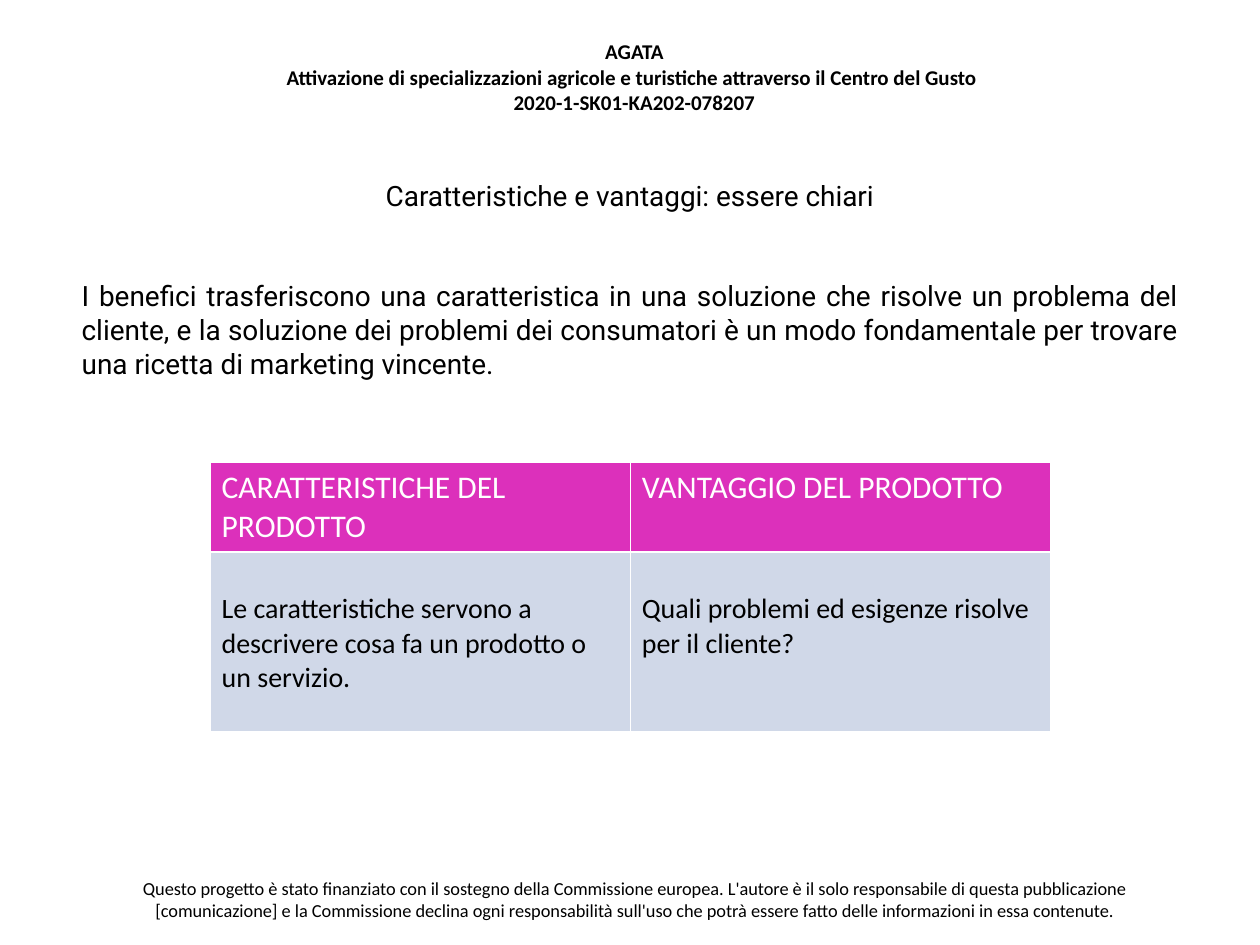
from lxml import etree
from pptx import Presentation
from pptx.dml.color import RGBColor
from pptx.enum.text import PP_ALIGN as Align
from pptx.oxml.ns import qn
from pptx.util import Inches, Pt

COLORS = {"text": "000000", "white": "FFFFFF", "header": "DC30BB", "body": "D0D8E8"}


def write(frame, lines, size, font="Calibri", color="text", bold=False, align=Align.LEFT):
    """Fill a text frame with one paragraph per line."""
    frame.word_wrap = True
    for index, line in enumerate(lines):
        para = frame.paragraphs[0] if index == 0 else frame.add_paragraph()
        para.alignment = align
        span = para.add_run()
        span.text = line
        span.font.size = Pt(size)
        span.font.name = font
        span.font.bold = bold
        span.font.color.rgb = RGBColor.from_string(COLORS[color])


def add_borders(cell, color, width):
    properties = cell._tc.get_or_add_tcPr()
    for index, side in enumerate(("lnL", "lnR", "lnT", "lnB")):
        line = etree.Element(qn(f"a:{side}"), w=str(Pt(width)))
        fill = etree.SubElement(line, qn("a:solidFill"))
        etree.SubElement(fill, qn("a:srgbClr"), val=COLORS[color])
        properties.insert(index, line)


deck = Presentation()
deck.slide_width, deck.slide_height = Inches(10), Inches(7.5)
page = deck.slides.add_slide(deck.slide_layouts[6])

# Project heading and funding notice
heading = page.shapes.add_textbox(Inches(2.08), Inches(0.26), Inches(5.91), Inches(0.71))
write(heading.text_frame, [
    "AGATA",
    "Attivazione di specializzazioni agricole e turistiche attraverso il Centro del Gusto ",
    "2020-1-SK01-KA202-078207",
], 12, bold=True, align=Align.CENTER)

notice = page.shapes.add_textbox(Inches(0.54), Inches(6.91), Inches(9), Inches(0.47))
write(notice.text_frame, [
    "Questo progetto è stato finanziato con il sostegno della Commissione europea. "
    "L'autore è il solo responsabile di questa pubblicazione [comunicazione] e la "
    "Commissione declina ogni responsabilità sull'uso che potrà essere fatto delle "
    "informazioni in essa contenute.",
], 10.5, align=Align.CENTER)

# Title and explanation
body = page.shapes.add_textbox(Inches(0.55), Inches(1.37), Inches(8.9), Inches(5.31))
write(body.text_frame, [
    "Caratteristiche e vantaggi: essere chiari",
    "I benefici trasferiscono una caratteristica in una soluzione che risolve un problema "
    "del cliente, e la soluzione dei problemi dei consumatori è un modo fondamentale per "
    "trovare una ricetta di marketing vincente.",
], 16, font="Roboto", align=Align.JUSTIFY)
title, explanation = body.text_frame.paragraphs
title.alignment = Align.CENTER
explanation.space_before = Pt(38)

# Features and benefits table: height, fill, text colour, size, top margin, texts
rows = [
    (0.71, "header", "white", 18, 0.05,
     ["CARATTERISTICHE DEL PRODOTTO", "VANTAGGIO DEL PRODOTTO"]),
    (1.43, "body", "text", 16, 0.32,
     ["Le caratteristiche servono a descrivere cosa fa un prodotto o un servizio.",
      "Quali problemi ed esigenze risolve per il cliente?"]),
]
table = page.shapes.add_table(2, 2, Inches(1.67), Inches(3.67), Inches(6.67), Inches(2.14)).table
for row, (height, fill, color, size, top, texts) in zip(table.rows, rows):
    row.height = Inches(height)
    for cell, text in zip(row.cells, texts):
        cell.margin_left = cell.margin_right = Inches(0.09)
        cell.margin_top, cell.margin_bottom = Inches(top), Inches(0.05)
        cell.fill.solid()
        cell.fill.fore_color.rgb = RGBColor.from_string(COLORS[fill])
        add_borders(cell, "white", 1)
        write(cell.text_frame, [text], size, color=color)

deck.save("out.pptx")
